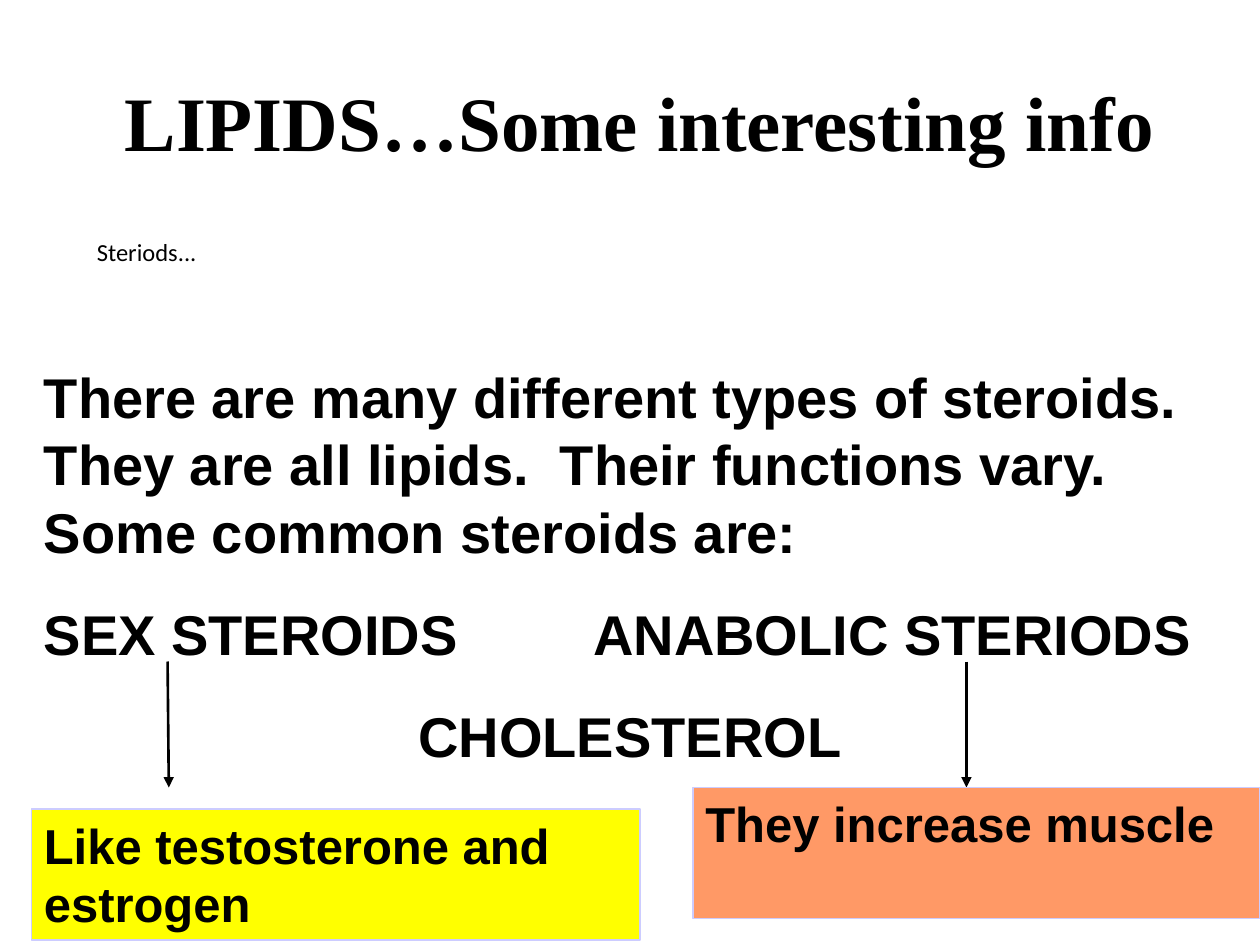
from pptx import Presentation
from pptx.dml.color import RGBColor
from pptx.enum.shapes import MSO_CONNECTOR as Connector, MSO_SHAPE as Shape
from pptx.enum.text import MSO_ANCHOR as Anchor, PP_ALIGN as Align
from pptx.oxml.ns import qn
from pptx.util import Inches, Pt
from lxml.etree import SubElement

BLACK = RGBColor(0x00, 0x00, 0x00)
YELLOW = RGBColor(0xFF, 0xFF, 0x00)
ORANGE = RGBColor(0xFF, 0x99, 0x66)
LAVENDER = RGBColor(0xCC, 0xCC, 0xFF)

TITLE_FONT = {"name": "Times New Roman", "size": Pt(44), "bold": True}
LABEL_FONT = {"name": "Calibri", "size": Pt(14), "bold": False}
BODY_FONT = {"name": "Arial", "size": Pt(32), "bold": True}
NOTE_FONT = {"name": "Arial", "size": Pt(28), "bold": True}


def write(box, paragraphs, font, anchor=Anchor.TOP):
    """Fill a box with (text, alignment, space before) paragraphs."""
    frame = box.text_frame
    frame.word_wrap = True
    frame.vertical_anchor = anchor
    for index, (text, align, space) in enumerate(paragraphs):
        para = frame.add_paragraph() if index else frame.paragraphs[0]
        para.alignment = align
        para.space_before = Pt(space)
        span = para.add_run()
        span.text = text
        span.font.color.rgb = BLACK
        for key, value in font.items():
            setattr(span.font, key, value)


deck = Presentation()
deck.slide_width, deck.slide_height = Inches(10), Inches(7.5)
page = deck.slides.add_slide(deck.slide_layouts[6])

# Title
title = page.shapes.add_textbox(Inches(0.83), Inches(0.33), Inches(8.5), Inches(1.25))
write(title, [("LIPIDS…Some interesting info", Align.CENTER, 0)], TITLE_FONT, Anchor.MIDDLE)

# Topic label
label = page.shapes.add_textbox(Inches(0.67), Inches(1.83), Inches(3.28), Inches(0.83))
write(label, [("Steriods...", Align.LEFT, 0)], LABEL_FONT)

# Body text, with a tab stop between the two steroid types
body = page.shapes.add_textbox(Inches(0.25), Inches(2.83), Inches(9.5), Inches(5.2))
write(body, [
    ("There are many different types of steroids.  They are all lipids.  "
     "Their functions vary.  Some common steroids are:", Align.LEFT, 0),
    ("SEX STEROIDS\tANABOLIC STERIODS", Align.LEFT, 20),
    ("CHOLESTEROL", Align.CENTER, 20),
], BODY_FONT)
types_format = body.text_frame.paragraphs[1]._p.get_or_add_pPr()
tab_list = SubElement(types_format, qn("a:tabLst"))
SubElement(tab_list, qn("a:tab"), pos=str(Inches(4.36)), algn="l")

# Arrows from the steroid types down to their notes
for start_x, end_x in [(1.33, 1.34), (7.67, 7.67)]:
    arrow = page.shapes.add_connector(
        Connector.STRAIGHT, Inches(start_x), Inches(5.25), Inches(end_x), Inches(6.25))
    arrow.line.color.rgb = BLACK
    arrow.line.width = Pt(1.5)
    SubElement(arrow.line._get_or_add_ln(), qn("a:tailEnd"), type="triangle")
    SubElement(arrow._element.spPr, qn("a:effectLst"))

# Coloured notes
for text, left, top, width, color in [
    ("Like testosterone and estrogen", 0.25, 6.42, 4.83, YELLOW),
    ("They increase muscle", 5.5, 6.25, 4.5, ORANGE),
]:
    note = page.shapes.add_shape(
        Shape.RECTANGLE, Inches(left), Inches(top), Inches(width), Inches(1.04))
    note.shadow.inherit = False
    note.fill.solid()
    note.fill.fore_color.rgb = color
    note.line.color.rgb = LAVENDER
    note.line.width = Pt(0.75)
    write(note, [(text, Align.LEFT, 0)], NOTE_FONT)

deck.save("out.pptx")
